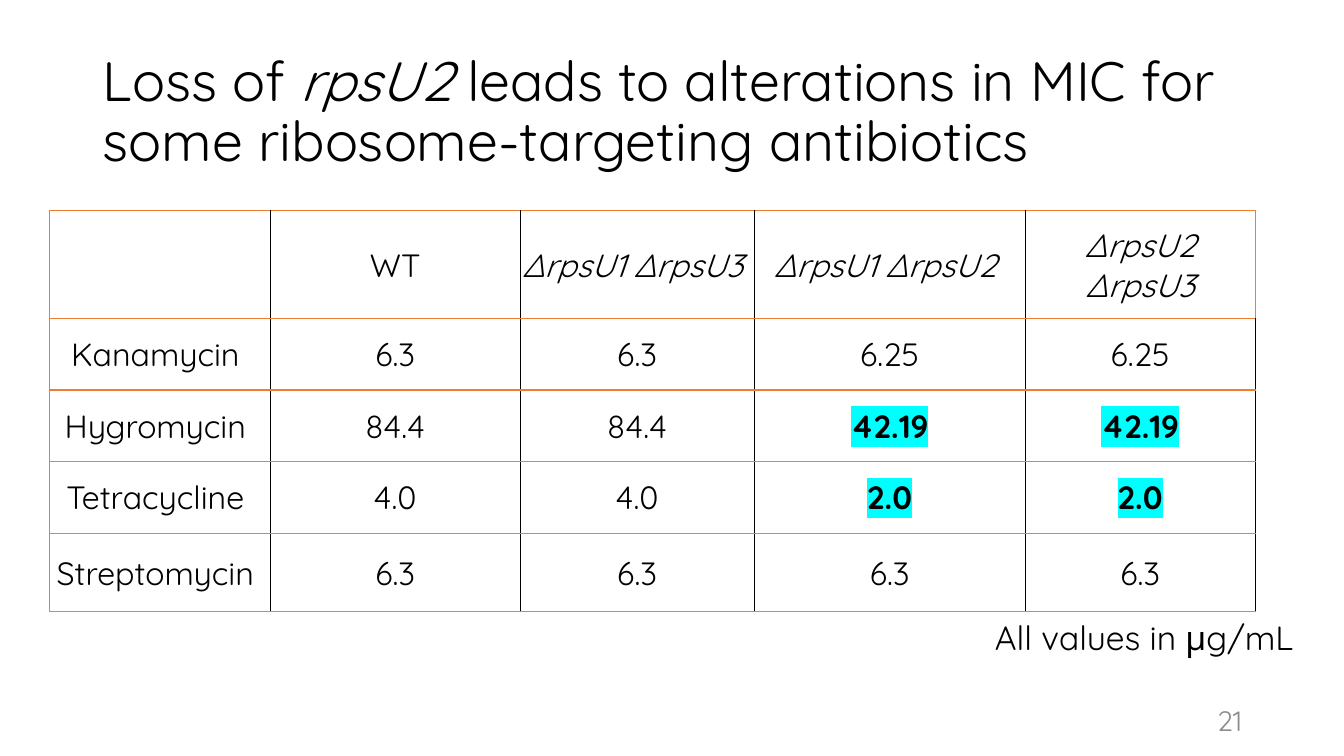
"""Build a slide with a table of antibiotic MIC values for rpsU mutants."""
from lxml.etree import SubElement
from pptx import Presentation
from pptx.dml.color import RGBColor
from pptx.enum.text import MSO_ANCHOR as Anchor, MSO_AUTO_SIZE as AutoSize, PP_ALIGN as Align
from pptx.oxml.ns import qn
from pptx.util import Inches, Pt

FONT = "Quicksand"
BLACK, WHITE, ORANGE, GREY, CYAN = "000000", "FFFFFF", "ED7D31", "999999", "00FFFF"


def style(para, size, color=BLACK, align=Align.LEFT):
    para.alignment = align
    para.font.name = FONT
    para.font.size = Pt(size)
    para.font.color.rgb = RGBColor.from_string(color)


def add_color(parent, tag, color):
    SubElement(SubElement(parent, qn(tag)), qn("a:srgbClr"), val=color)


deck = Presentation()
deck.slide_width, deck.slide_height = Inches(13.33), Inches(7.5)
page = deck.slides.add_slide(deck.slide_layouts[5])

title = page.shapes.title
title.left, title.top, title.width, title.height = map(Inches, (0.92, 0.4, 11.5, 1.45))
frame = title.text_frame
frame.word_wrap = True
frame.auto_size = AutoSize.NONE
frame.vertical_anchor = Anchor.MIDDLE
para = frame.paragraphs[0]
style(para, 39.6)
para.line_spacing = 0.9
for text, italic in [("Loss of ", False), ("rpsU2", True),
                     (" leads to alterations in MIC for some ribosome-targeting antibiotics", False)]:
    span = para.add_run()
    span.text = text
    span.font.italic = italic

rows = [
    ["", "WT", "∆rpsU1 ∆rpsU3 ", "∆rpsU1 ∆rpsU2 ", "∆rpsU2 ∆rpsU3"],
    ["Kanamycin ", "6.3", "6.3", "6.25", "6.25"],
    ["Hygromycin ", "84.4", "84.4", "42.19", "42.19"],
    ["Tetracycline ", "4.0", "4.0", "2.0", "2.0"],
    ["Streptomycin ", "6.3", "6.3", "6.3", "6.3"],
]
widths = [2.19, 2.48, 2.32, 2.69, 2.28]
heights = [1.07, 0.71, 0.71, 0.71, 0.78]
row_lines = [ORANGE] * 3 + [GREY] * 3
column_lines = [ORANGE] + [BLACK] * 5
changed = {"42.19", "2.0"}

table = page.shapes.add_table(len(rows), len(widths), Inches(0.49), Inches(2.09),
                              Inches(sum(widths)), Inches(sum(heights))).table
table.first_row = table.horz_banding = False
for column, width in zip(table.columns, widths):
    column.width = Inches(width)
for r, (values, height) in enumerate(zip(rows, heights)):
    table.rows[r].height = Inches(height)
    for c, value in enumerate(values):
        cell = table.cell(r, c)
        cell.vertical_anchor = Anchor.MIDDLE
        cell.margin_left = cell.margin_right = cell.margin_top = Inches(0.01)
        cell.margin_bottom = 0
        right = ORANGE if (r, c) == (0, 4) else column_lines[c + 1]
        borders = {"a:lnL": column_lines[c], "a:lnR": right,
                   "a:lnT": row_lines[r], "a:lnB": row_lines[r + 1]}
        properties = cell._tc.get_or_add_tcPr()
        for side, color in borders.items():
            line = SubElement(properties, qn(side), w=str(Pt(1)))
            add_color(line, "a:solidFill", color)
        cell.fill.solid()
        cell.fill.fore_color.rgb = RGBColor.from_string(WHITE)
        para = cell.text_frame.paragraphs[0]
        style(para, 23, align=Align.CENTER)
        if value:
            span = para.add_run()
            span.text = value
            span.font.italic = value.startswith("∆")
            span.font.bold = value in changed
            if value in changed:
                add_color(span._r.get_or_add_rPr(), "a:highlight", CYAN)

for text, place, size, color, align, anchor in [
    ("All values in μg/mL", (9.77, 6.07, 3.18, 0.5), 24, BLACK, Align.LEFT, Anchor.TOP),
    ("21", (9.42, 6.95, 3, 0.4), 20, "8C8C8C", Align.RIGHT, Anchor.MIDDLE),
]:
    box = page.shapes.add_textbox(*map(Inches, place))
    frame = box.text_frame
    frame.word_wrap = True
    frame.vertical_anchor = anchor
    frame.text = text
    style(frame.paragraphs[0], size, color, align)

deck.save("out.pptx")
